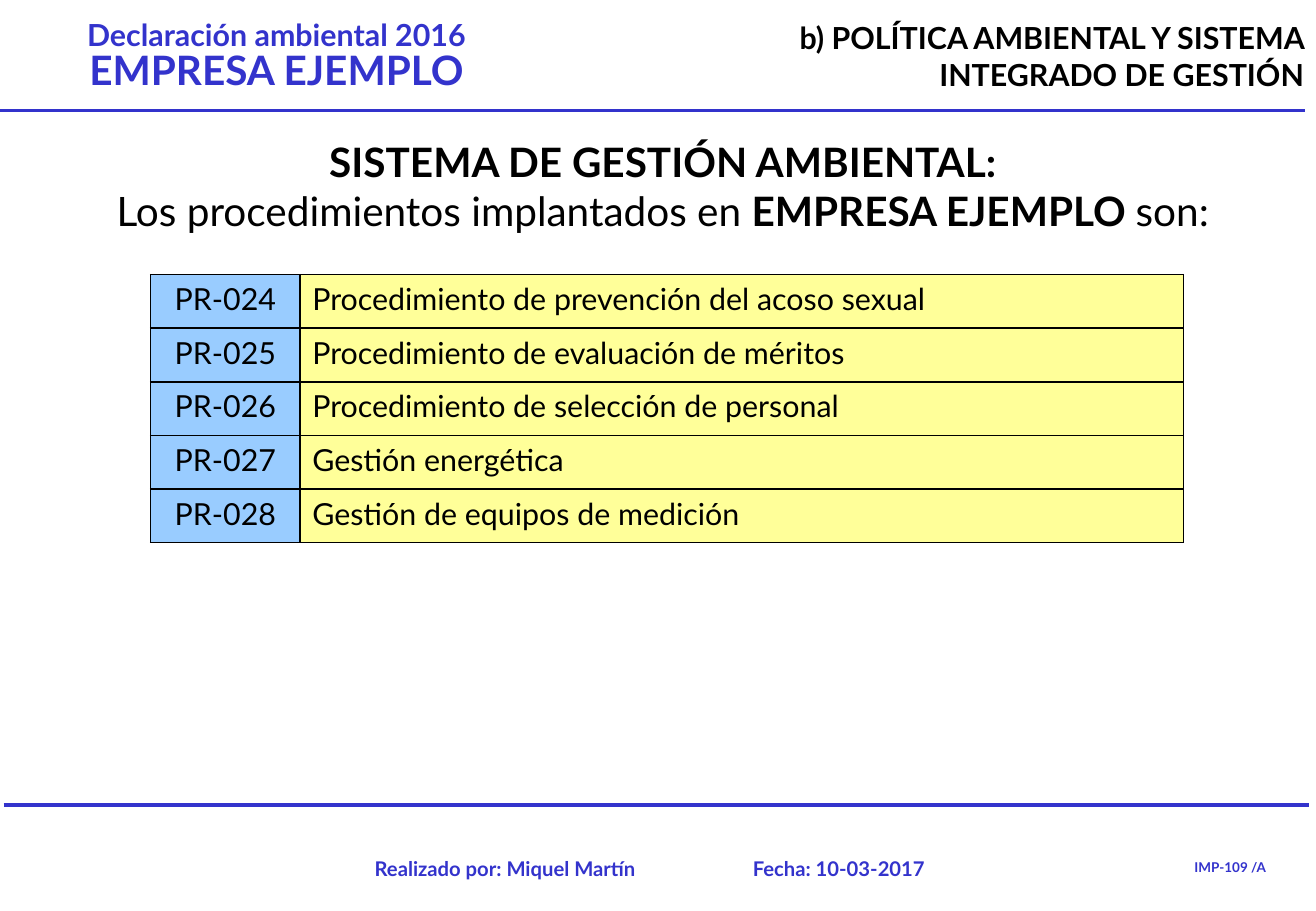
from lxml.etree import SubElement
from pptx import Presentation
from pptx.dml.color import RGBColor
from pptx.enum.shapes import MSO_CONNECTOR
from pptx.enum.text import MSO_ANCHOR, MSO_AUTO_SIZE, PP_ALIGN
from pptx.oxml.ns import qn
from pptx.util import Inches, Pt

BLUE = RGBColor(0x33, 0x33, 0xCC)
BLACK = RGBColor(0, 0, 0)
SKY = RGBColor(0x99, 0xCC, 0xFF)
CREAM = RGBColor(0xFF, 0xFF, 0x99)
LEFT, MID, RIGHT = PP_ALIGN.LEFT, PP_ALIGN.CENTER, PP_ALIGN.RIGHT

FIRM = "EMPRESA EJEMPLO"
TITLE = [
    [("SISTEMA DE GESTIÓN AMBIENTAL:", 24, True)],
    [("Los procedimientos implantados en ", 24, False),
     (FIRM + " ", 24, True), ("son:", 24, False)],
]
TITLE_AT = (1.29, 14.4, 94.46, 12)
LABELS = [
    ((0.74, 1.73, 40.54, 9.33), MID, BLUE, 0.85,
     [[("Declaración ambiental 2016", 18, True)], [(FIRM, 24, True)]]),
    ((53.65, 1.47, 46.35, 9.33), RIGHT, BLACK, 1.0,
     [[("b) POLÍTICA AMBIENTAL Y SISTEMA INTEGRADO DE GESTIÓN", 18, True)]]),
    ((26.13, 93.33, 23.08, 3.33), RIGHT, BLUE, 1.0,
     [[("Realizado por: Miquel Martín", 12, True)]]),
    ((54.66, 93.33, 16.9, 3.33), RIGHT, BLUE, 1.0,
     [[("Fecha: 10-03-2017 ", 12, True)]]),
    ((87.72, 93.6, 11.54, 3.33), MID, BLUE, 1.0,
     [[("IMP-109 /A", 8, True)]]),
]
RULES = [(0, 99.17, 12.13), (0.28, 99.45, 88.4)]
ROWS = [
    ("PR-024", "Procedimiento de prevención del acoso sexual"),
    ("PR-025", "Procedimiento de evaluación de méritos"),
    ("PR-026", "Procedimiento de selección de personal"),
    ("PR-027", "Gestión energética"),
    ("PR-028", "Gestión de equipos de medición"),
]
GRID_X, GRID_Y, ROW_H = 11.45, 30.13, 5.89
COLS = [(11.36, SKY, MID), (67.13, CREAM, LEFT)]

deck = Presentation()
deck.slide_width, deck.slide_height = Inches(10.83), Inches(7.5)
slide = deck.slides.add_slide(deck.slide_layouts[5])


def across(share):
    return round(deck.slide_width * share / 100)


def down(share):
    return round(deck.slide_height * share / 100)


def place(box):
    x, y, w, h = box
    return across(x), down(y), across(w), down(h)


def apply(item, style):
    for key, value in style.items():
        setattr(item, key, value)


def write(frame, lines, align, color, space=1.0, indent=0):
    for i, runs in enumerate(lines):
        para = frame.add_paragraph() if i else frame.paragraphs[0]
        apply(para, {"alignment": align, "line_spacing": space})
        if indent:
            para._p.get_or_add_pPr().set("indent", str(Inches(indent)))
        for text, size, bold in runs:
            run = para.add_run()
            run.text = text
            apply(run.font, {"name": "Lato", "size": Pt(size), "bold": bold})
            run.font.color.rgb = color


def border(cell):
    props = cell._tc.get_or_add_tcPr()
    for side in ("a:lnL", "a:lnR", "a:lnT", "a:lnB"):
        edge = SubElement(props, qn(side), w=str(Pt(1)))
        fill = SubElement(edge, qn("a:solidFill"))
        SubElement(fill, qn("a:srgbClr"), val=str(BLACK))


for start, end, y in RULES:
    rule = slide.shapes.add_connector(
        MSO_CONNECTOR.STRAIGHT, across(start), down(y), across(end), down(y))
    rule.line.color.rgb = BLUE
    rule.line.width = Pt(2.25)
    SubElement(rule._element.spPr, qn("a:effectLst"))

for box, align, color, space, lines in LABELS:
    frame = slide.shapes.add_textbox(*place(box)).text_frame
    frame.word_wrap = True
    write(frame, lines, align, color, space)

title = slide.shapes.title
apply(title, dict(zip(("left", "top", "width", "height"), place(TITLE_AT))))
apply(title.text_frame, {"word_wrap": True, "auto_size": MSO_AUTO_SIZE.NONE,
                         "vertical_anchor": MSO_ANCHOR.MIDDLE})
write(title.text_frame, TITLE, MID, BLACK, indent=0.4)

width = sum(col[0] for col in COLS)
area = (GRID_X, GRID_Y, width, ROW_H * len(ROWS))
table = slide.shapes.add_table(len(ROWS), len(COLS), *place(area)).table
apply(table, {"first_row": False, "horz_banding": False})
for c, (share, tint, align) in enumerate(COLS):
    table.columns[c].width = across(share)
    for r, row in enumerate(ROWS):
        table.rows[r].height = down(ROW_H)
        cell = table.cell(r, c)
        write(cell.text_frame, [[(row[c], 18, False)]], align, BLACK)
        border(cell)
        cell.fill.solid()
        cell.fill.fore_color.rgb = tint

deck.save("out.pptx")
